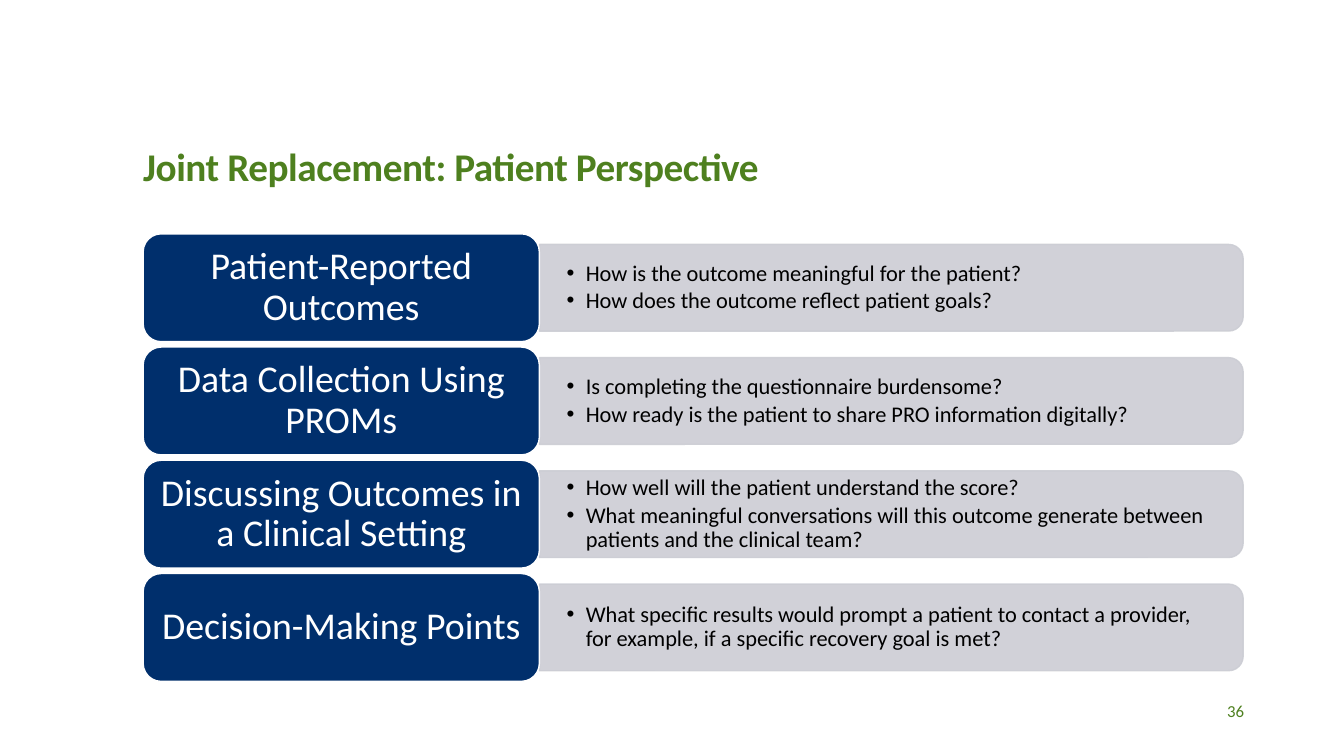
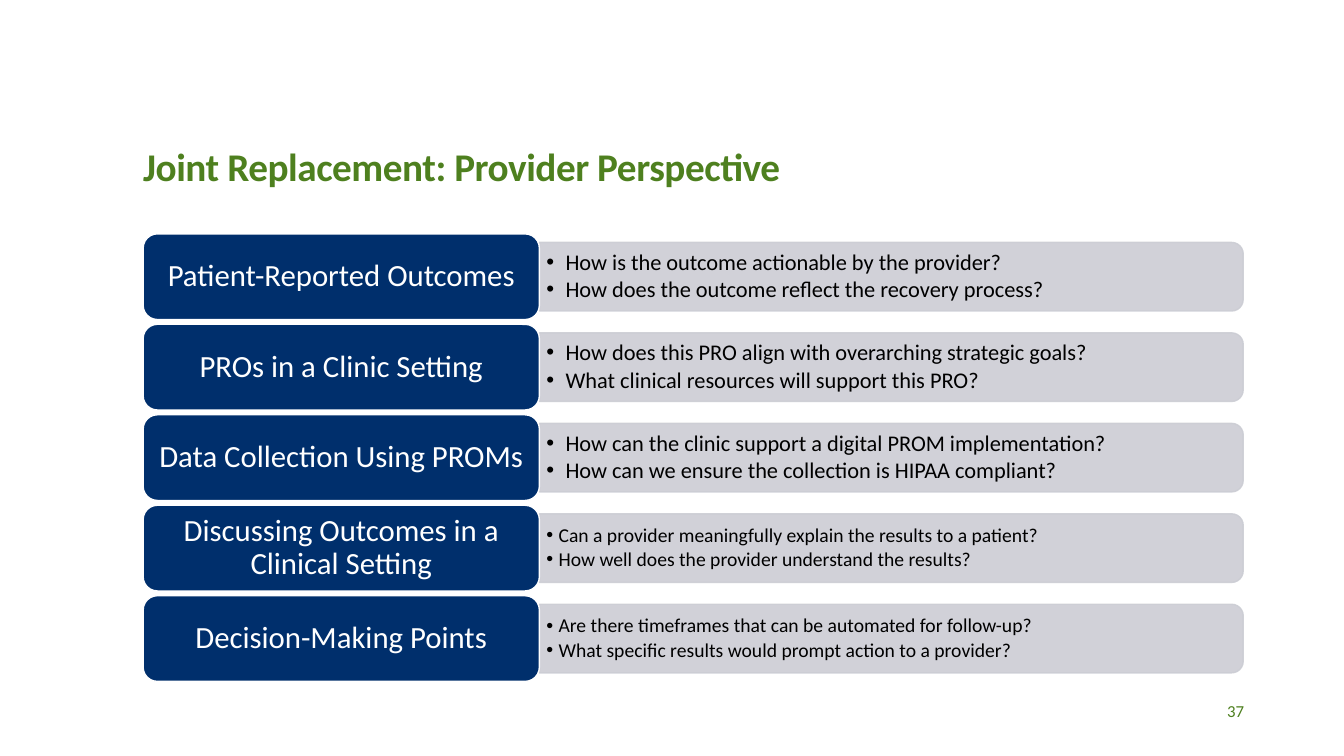
from lxml import etree
from pptx import Presentation
from pptx import util as u
from pptx.dml.color import RGBColor
from pptx.enum import shapes, text
from pptx.oxml.ns import qn

PX = 9144  # EMU per px, 100 px to the inch
FONT = "Calibri"
INK = {"green": "4E801F", "navy": "002F6C", "grey": "CCCDD4",
       "white": "FFFFFF", "black": "000000"}
LEFT, TOP, BOTTOM = 142, 232, 676
SPLIT, RIGHT = 535, 1233  # where the bands start and end
INDENT = {16: 19, 14: 12}  # bullet indent by text size

# Measures of each slide's rows: label height, band height, text frame
# height, label text size, label insets and band insets (across, down)
WIDE = {"label": 107, "band": 86, "frame": 77, "size": 27,
        "pad": (11, 6), "inset": (27, 14)}
SLIM = {"label": 85, "band": 68, "frame": 62, "size": 22,
        "pad": (9, 5), "inset": (7, 3)}

# Each row: label, size of the questions, questions
PATIENT = [
    ("Patient-Reported Outcomes", 16,
     ["How is the outcome meaningful for the patient?",
      "How does the outcome reflect patient goals?"]),
    ("Data Collection Using PROMs", 16,
     ["Is completing the questionnaire burdensome?",
      "How ready is the patient to share PRO information digitally?"]),
    ("Discussing Outcomes in a Clinical Setting", 16,
     ["How well will the patient understand the score?",
      "What meaningful conversations will this outcome generate between "
      "patients and the clinical team?"]),
    ("Decision-Making Points", 16,
     ["What specific results would prompt a patient to contact a provider, "
      "for example, if a specific recovery goal is met?"]),
]
PROVIDER = [
    ("Patient-Reported Outcomes", 16,
     ["How is the outcome actionable by the provider?",
      "How does the outcome reflect the recovery process?"]),
    ("PROs in a Clinic Setting", 16,
     ["How does this PRO align with overarching strategic goals?",
      "What clinical resources will support this PRO?"]),
    ("Data Collection Using PROMs", 16,
     ["How can the clinic support a digital PROM implementation?",
      "How can we ensure the collection is HIPAA compliant?"]),
    ("Discussing Outcomes in a Clinical Setting", 14,
     ["Can a provider meaningfully explain the results to a patient?",
      "How well does the provider understand the results?"]),
    ("Decision-Making Points", 14,
     ["Are there timeframes that can be automated for follow-up?",
      "What specific results would prompt action to a provider?"]),
]


def box(*sides):
    return [round(side * PX) for side in sides]


def rgb(ink):
    return RGBColor.from_string(INK[ink])


def style(para, size, ink, bold=False):
    font = para.font
    font.name, font.size, font.bold = FONT, u.Pt(size), bold
    font.color.rgb = rgb(ink)


def setup(shape, pad=(0, 0), anchor=text.MSO_ANCHOR.TOP):
    frame = shape.text_frame
    frame.word_wrap = True
    frame.vertical_anchor = anchor
    frame.margin_left = frame.margin_right = pad[0] * PX
    frame.margin_top = frame.margin_bottom = pad[1] * PX
    return frame


def paint(shape, fill, line):
    shape.shadow.inherit = False
    shape.fill.solid()
    shape.fill.fore_color.rgb = rgb(fill)
    shape.line.color.rgb = rgb(line)
    shape.line.width = u.Pt(1)


def fade(shape, percent):
    for color in shape._element.spPr.iter(qn("a:srgbClr")):
        etree.SubElement(color, qn("a:alpha"), val=str(percent * 1000))


def bullet(para, indent):
    props = para._p.get_or_add_pPr()
    props.set("marL", str(indent * PX))
    props.set("indent", str(-indent * PX))
    etree.SubElement(props, qn("a:buFont"), typeface="Arial")
    etree.SubElement(props, qn("a:buChar"), char="•")


def title(slide, words):
    para = setup(slide.shapes.add_textbox(*box(LEFT, 150, 1091, 74))).paragraphs[0]
    run = para.add_run()
    run.text = words
    run._r.get_or_add_rPr().set("spc", "-30")
    para.line_spacing = 0.8
    style(para, 28, "green", True)


def number(slide, value):
    para = setup(slide.shapes.add_textbox(*box(1167, 695, 67, 30))).paragraphs[0]
    para.text = str(value)
    para.alignment = text.PP_ALIGN.RIGHT
    style(para, 12, "green")


def band(slide, mid, thick):
    # A shape with two round top corners, turned so they face right
    long = RIGHT - SPLIT
    shape = slide.shapes.add_shape(
        shapes.MSO_SHAPE.ROUND_2_SAME_RECTANGLE,
        *box((SPLIT + RIGHT - thick) / 2, mid - long / 2, thick, long))
    shape.rotation = 90
    paint(shape, "grey", "grey")
    fade(shape, 90)


def points(slide, mid, kit, size, lines):
    high = kit["frame"]
    area = slide.shapes.add_textbox(*box(SPLIT, mid - high / 2, 694, high))
    frame = setup(area, kit["inset"], text.MSO_ANCHOR.MIDDLE)
    for i, line in enumerate(lines):
        para = frame.add_paragraph() if i else frame.paragraphs[0]
        para.text = line
        para.line_spacing = 0.9
        para.space_after = u.Pt(size * 0.15)
        bullet(para, INDENT[size])
        style(para, size, "black")


def label(slide, top, kit, words):
    shape = slide.shapes.add_shape(
        shapes.MSO_SHAPE.ROUNDED_RECTANGLE,
        *box(LEFT, top, SPLIT - LEFT, kit["label"]))
    paint(shape, "navy", "white")
    para = setup(shape, kit["pad"], text.MSO_ANCHOR.MIDDLE).paragraphs[0]
    para.text = words
    para.alignment = text.PP_ALIGN.CENTER
    para.line_spacing = 0.9
    style(para, kit["size"], "white")


def build(deck, words, page, kit, rows):
    slide = deck.slides.add_slide(deck.slide_layouts[6])
    title(slide, words)
    # Rows fill the height with equal gaps
    pitch = (BOTTOM - TOP - kit["label"]) / (len(rows) - 1)
    for i, (name, size, lines) in enumerate(rows):
        top = TOP + i * pitch
        mid = top + kit["label"] / 2
        band(slide, mid, kit["band"])
        points(slide, mid, kit, size, lines)
        label(slide, top, kit, name)
    number(slide, page)


def main():
    deck = Presentation()
    deck.slide_width, deck.slide_height = box(1333, 750)
    build(deck, "Joint Replacement: Patient Perspective", 36, WIDE, PATIENT)
    build(deck, "Joint Replacement: Provider Perspective", 37, SLIM, PROVIDER)
    deck.save("out.pptx")


if __name__ == "__main__":
    main()
